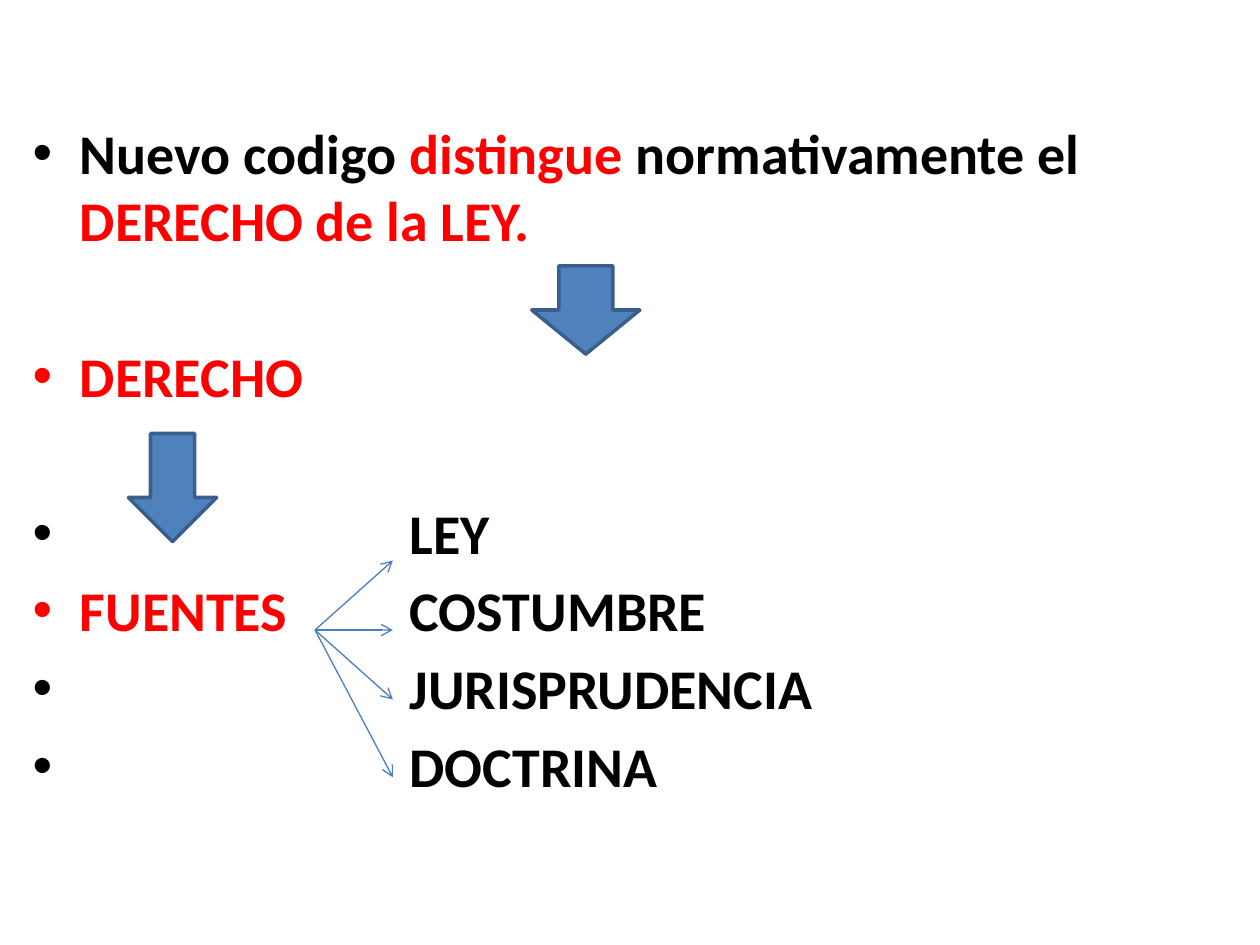
from lxml import etree
from pptx import Presentation
from pptx.dml.color import RGBColor
from pptx.enum import shapes, text
from pptx.oxml import ns
from pptx.util import Cm, Pt

COLORS = {"black": "000000", "red": "FF0000", "blue": "4F81BD",
          "edge": "3A5F8C", "arrow": "4B7EBC"}

# Content: (space before in points, [(text, colour), ...]); a tab leads to the sources column
PARAGRAPHS = [
    (0, [("Nuevo codigo ", "black"), ("distingue ", "red"),
         ("normativamente el ", "black"), ("DERECHO de la LEY.", "red")]),
    (51, [("DERECHO", "red")]),
    (51, [("\tLEY", "black")]),
    (6, [("FUENTES", "red"), ("\tCOSTUMBRE", "black")]),
    (6, [("\tJURISPRUDENCIA", "black")]),
    (6, [("\tDOCTRINA", "black")]),
]

# Geometry in centimetres
BODY = (0.41, 0.58, 24.41, 17.86)
INDENT, SOURCES_TAB = 0.95, 7.6
BLOCK_ARROWS = [(2.59, 8.74, 1.78, 2.18), (10.72, 5.36, 2.18, 1.78)]
FAN_START, FAN_END_X = (6.35, 12.7), 7.92
FAN_END_YS = [11.3, 12.7, 14.1, 15.67]


def color(name):
    return RGBColor.from_string(COLORS[name])


def add_element(parent, tag, **attributes):
    return etree.SubElement(parent, ns.qn(tag), attributes)


def add_text(para, content, *, shade, size=32, font="Calibri", bold=True):
    span = para.add_run()
    span.text = content
    span.font.size, span.font.name, span.font.bold = Pt(size), font, bold
    span.font.color.rgb = color(shade)


def format_bullet(para):
    properties = para._p.get_or_add_pPr()
    properties.set("marL", str(Cm(INDENT)))
    properties.set("indent", str(-Cm(INDENT)))
    add_element(properties, "a:buFont", typeface="Arial")
    add_element(properties, "a:buChar", char="•")
    tabs = add_element(properties, "a:tabLst")
    add_element(tabs, "a:tab", pos=str(Cm(SOURCES_TAB)), algn="l")


def add_body(page):
    box = page.shapes.add_textbox(*map(Cm, BODY))
    frame = box.text_frame
    frame.word_wrap = True
    frame.vertical_anchor = text.MSO_ANCHOR.TOP
    frame.margin_top = Cm(1.8)
    for index, (space, spans) in enumerate(PARAGRAPHS):
        para = frame.add_paragraph() if index else frame.paragraphs[0]
        para.space_before = Pt(space)
        format_bullet(para)
        for content, shade in spans:
            add_text(para, content, shade=shade)


def add_block_arrow(page, place):
    arrow = page.shapes.add_shape(shapes.MSO_SHAPE.DOWN_ARROW, *map(Cm, place))
    arrow.shadow.inherit = False
    arrow.fill.solid()
    arrow.fill.fore_color.rgb = color("blue")
    arrow.line.color.rgb = color("edge")
    arrow.line.width = Pt(2)


def add_fan_arrow(page, end_y):
    line = page.shapes.add_connector(
        shapes.MSO_CONNECTOR.STRAIGHT, *map(Cm, (*FAN_START, FAN_END_X, end_y)))
    line.line.color.rgb = color("arrow")
    line.line.width = Pt(0.75)
    add_element(line.line._get_or_add_ln(), "a:tailEnd", type="arrow")
    add_element(line._element.spPr, "a:effectLst")


def main():
    deck = Presentation()
    deck.slide_width, deck.slide_height = Cm(25.4), Cm(19.05)
    page = deck.slides.add_slide(deck.slide_layouts[6])
    add_body(page)
    for place in BLOCK_ARROWS:
        add_block_arrow(page, place)
    for end_y in FAN_END_YS:
        add_fan_arrow(page, end_y)
    deck.save("out.pptx")


if __name__ == "__main__":
    main()
